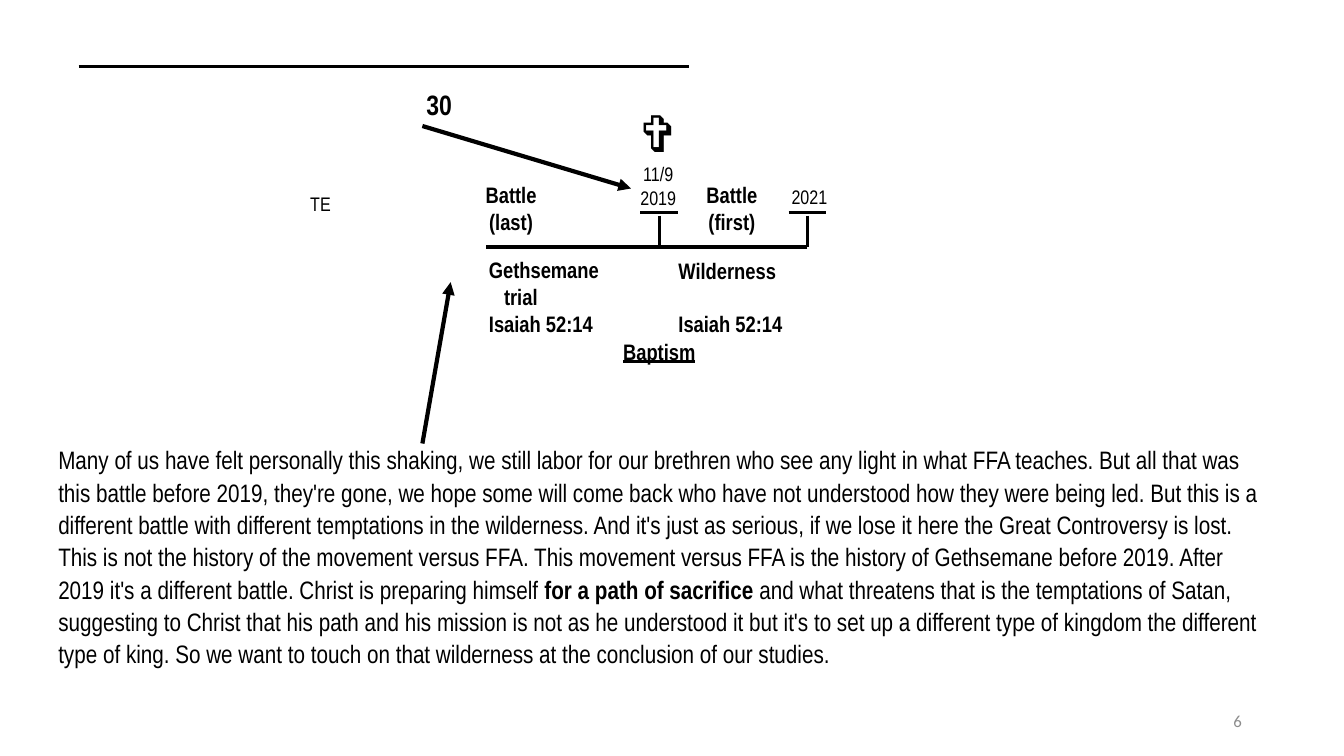
import pptx
import pptx.util
import pptx.dml.color
import pptx.enum.shapes
import pptx.enum.text
import pptx.oxml.ns
import lxml.etree

Align = pptx.enum.text.PP_ALIGN
deck = pptx.Presentation()
deck.slide_width = pptx.util.Inches(13.33)
deck.slide_height = pptx.util.Inches(7.5)
column = deck.slide_width / 100
row = deck.slide_height / 100
slide = deck.slides.add_slide(deck.slide_layouts[6])


def write(box, lines, size, bold=False, align=Align.CENTER, inset=0.04,
          font="Arial Narrow", color="000000"):
    left, top, width, height = box
    frame = slide.shapes.add_textbox(
        round(left * column), round(top * row), round(width * column), round(height * row)
    ).text_frame
    frame.word_wrap = True
    frame.margin_left = frame.margin_right = pptx.util.Inches(inset)
    frame.margin_top = frame.margin_bottom = pptx.util.Inches(min(inset, 0.05))
    frame.text = "\n".join(lines)
    for paragraph in frame.paragraphs:
        paragraph.alignment = align
        for run in paragraph.runs:
            run.font.size = pptx.util.Pt(size)
            run.font.bold = bold
            run.font.name = font
            run.font.color.rgb = pptx.dml.color.RGBColor.from_string(color)
    return frame


def draw(start, end, weight, arrow=False, color="000000"):
    line = slide.shapes.add_connector(
        pptx.enum.shapes.MSO_CONNECTOR.STRAIGHT,
        round(start[0] * column), round(start[1] * row),
        round(end[0] * column), round(end[1] * row))
    line.line.width = pptx.util.Pt(weight)
    line.line.color.rgb = pptx.dml.color.RGBColor.from_string(color)
    if arrow:
        lxml.etree.SubElement(line.line._get_or_add_ln(),
                              pptx.oxml.ns.qn("a:tailEnd"), type="triangle")
    lxml.etree.SubElement(line._element.spPr, pptx.oxml.ns.qn("a:effectLst"))


write((70.65, 92.67, 22.5, 5.33), ["6"], 12, align=Align.RIGHT, inset=0.1,
      font="Calibri", color="8C8C8C").vertical_anchor = pptx.enum.text.MSO_ANCHOR.MIDDLE

story = write((3.6, 57.87, 91.73, 31.33), [
    "Many of us have felt personally this shaking, we still labor for our brethren who see any "
    "light in what FFA teaches. But all that was this battle before 2019, they're gone, we hope "
    "some will come back who have not understood how they were being led. But this is a different "
    "battle with different temptations in the wilderness. And it's just as serious, if we lose it "
    "here the Great Controversy is lost. This is not the history of the movement versus FFA. This "
    "movement versus FFA is the history of Gethsemane before 2019. After 2019 it's a different "
    "battle. Christ is preparing himself "], 18, align=Align.LEFT, inset=0.1).paragraphs[0]
story.line_spacing = 1.07
for words, bold in [
    ("for a path of sacrifice ", True),
    ("and what threatens that is the temptations of Satan, suggesting to Christ that his path and "
     "his mission is not as he understood it but it's to set up a different type of kingdom the "
     "different type of king. So we want to touch on that wilderness at the conclusion of our "
     "studies.", False),
]:
    passage = story.add_run()
    passage.text = words
    passage.font.size = pptx.util.Pt(18)
    passage.font.name = "Arial Narrow"
    passage.font.bold = bold
    passage.font.color.rgb = pptx.dml.color.RGBColor.from_string("000000")

axis, tick_top, cap, cap_half = 32.67, 28.53, 28.13, 1.4
year_2019, year_2021 = 49.05, 60.08
draw((5.85, 8.8), (51.3, 8.8), 2)
draw((year_2021, axis), (36.15, axis), 3)
for year in (year_2019, year_2021):
    draw((year, tick_top), (year, axis), 2)
    draw((year - cap_half, cap), (year + cap_half, cap), 2)

arrow_left = 31.43
draw((arrow_left, 16.67), (46.95, 24.93), 3, arrow=True)
draw((arrow_left, 58.67), (33.53, 37.33), 3, arrow=True)

cross = write((45.45, 12.93, 7.05, 13.87), ["✞", "11/9", "2019"], 14)
cross.paragraphs[0].runs[0].font.size = pptx.util.Pt(36)
write((56.7, 23.87, 7.05, 4.13), ["2021"], 14)
write((20.4, 24.8, 6.9, 13.87), ["TE"], 14)
write((arrow_left, 11.07, 4.2, 6.67), ["30"], 20, bold=True, align=Align.LEFT)

for left, order in [(34.65, "(last)"), (51.08, "(first)")]:
    write((left, 23.47, 6.75, 9.2), ["Battle", order], 16, bold=True)

gethsemane = write((36.08, 33.33, 10.88, 13.07), ["Gethsemane", "trial", "Isaiah 52:14"],
                   16, bold=True, align=Align.LEFT)
gethsemane.paragraphs[1]._p.get_or_add_pPr().set("marL", str(pptx.util.Inches(0.15)))
wilderness = write((50.18, 33.47, 10.88, 13.07), ["Wilderness", "Isaiah 52:14"],
                   16, bold=True, align=Align.LEFT)
wilderness.paragraphs[1].space_before = pptx.util.Pt(19)

baptism = write((45.68, 44.13, 6.75, 6.4), ["Baptism"], 16, bold=True)
baptism.paragraphs[0].runs[0].font.underline = True

deck.save("out.pptx")
